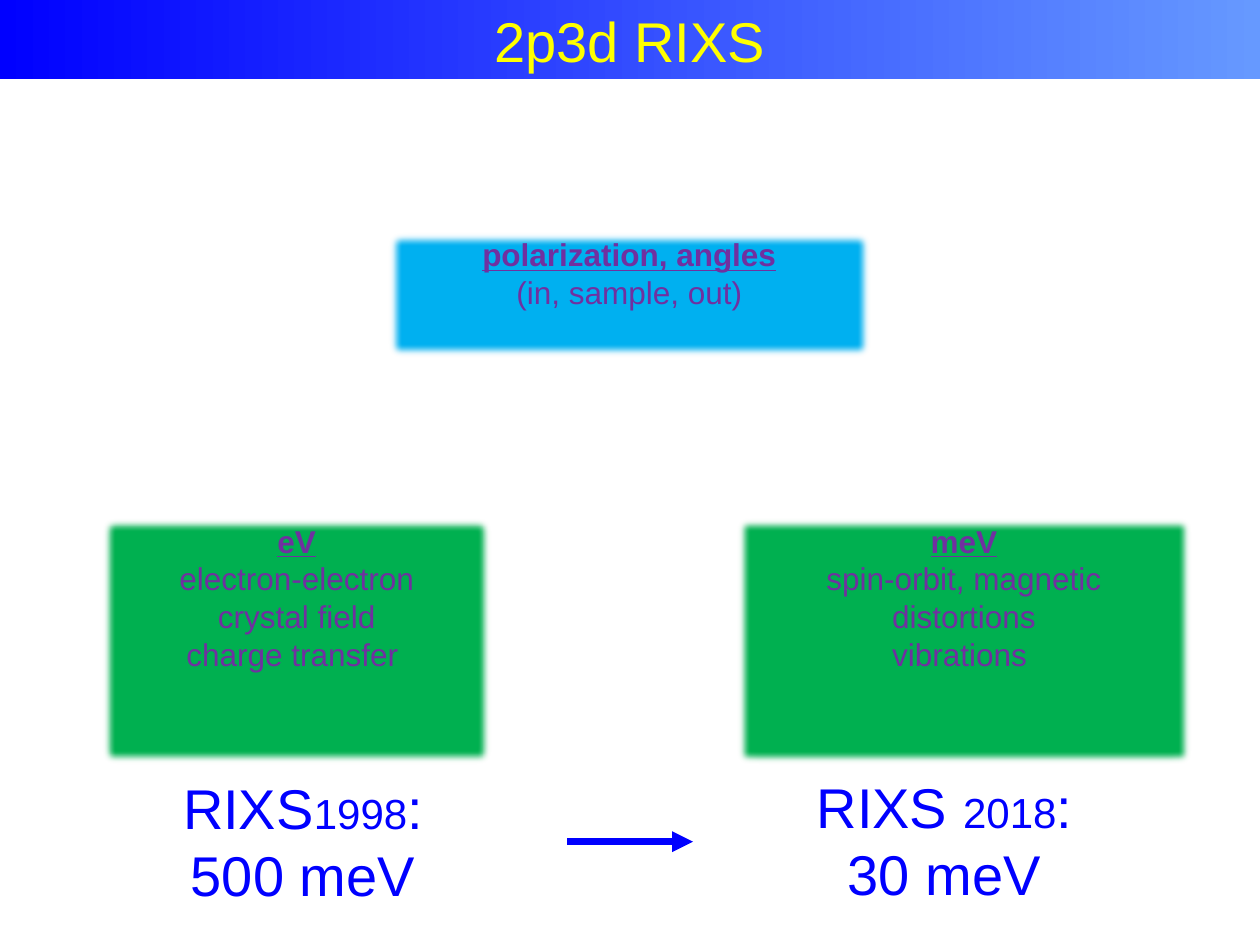
from dataclasses import dataclass

from lxml.etree import SubElement
from pptx import Presentation
from pptx.dml.color import RGBColor
from pptx.enum.shapes import MSO_CONNECTOR, MSO_SHAPE
from pptx.enum.text import MSO_ANCHOR, PP_ALIGN
from pptx.oxml.ns import qn
from pptx.util import Inches, Pt


@dataclass(frozen=True)
class Theme:
    font: str = "Arial"
    blue: RGBColor = RGBColor(0x00, 0x00, 0xFF)
    light_blue: RGBColor = RGBColor(0x66, 0x99, 0xFF)
    yellow: RGBColor = RGBColor(0xFF, 0xFF, 0x00)
    purple: RGBColor = RGBColor(0x70, 0x30, 0xA0)
    green: RGBColor = RGBColor(0x00, 0xB0, 0x50)
    cyan: RGBColor = RGBColor(0x00, 0xB0, 0xF0)
    title_size: Pt = Pt(32)
    year_size: Pt = Pt(24)
    body_size: Pt = Pt(18)
    arrow_width: Pt = Pt(4)
    soft_edge: Pt = Pt(5)


THEME = Theme()


def style_paragraph(para, size, color):
    para.alignment = PP_ALIGN.CENTER
    para.font.name = THEME.font
    para.font.size = size
    para.font.color.rgb = color


def add_rectangle(page, bounds):
    box = page.shapes.add_shape(MSO_SHAPE.RECTANGLE, *map(Inches, bounds))
    box.shadow.inherit = False
    box.line.fill.background()
    return box


def add_title_band(page, bounds, title):
    band = add_rectangle(page, bounds)
    band.fill.gradient()
    band.fill.gradient_angle = 0
    for stop, color in zip(band.fill.gradient_stops, (THEME.blue, THEME.light_blue)):
        stop.color.rgb = color
    band.text_frame.vertical_anchor = MSO_ANCHOR.MIDDLE
    para = band.text_frame.paragraphs[0]
    para.text = title
    style_paragraph(para, THEME.title_size, THEME.yellow)


def add_topic_box(page, bounds, color, heading, lines):
    box = add_rectangle(page, bounds)
    box.fill.solid()
    box.fill.fore_color.rgb = color
    effects = box._element.spPr.find(qn("a:effectLst"))
    SubElement(effects, qn("a:softEdge"), rad=str(int(THEME.soft_edge)))

    frame = box.text_frame
    frame.word_wrap = False
    frame.vertical_anchor = MSO_ANCHOR.TOP
    frame.text = "\n".join([heading, *lines])
    for para in frame.paragraphs:
        style_paragraph(para, THEME.body_size, THEME.purple)
    heading_font = frame.paragraphs[0].font
    heading_font.bold = True
    heading_font.underline = True


def add_resolution(page, bounds, label, year, value):
    box = page.shapes.add_textbox(*map(Inches, bounds))
    box.text_frame.word_wrap = False
    para = box.text_frame.paragraphs[0]
    style_paragraph(para, THEME.title_size, THEME.blue)
    for text in (label, year, ":"):
        span = para.add_run()
        span.text = text
        if text == year:
            span.font.size = THEME.year_size
    para.add_line_break()
    para.add_run().text = value


def add_arrow(page, left, right, height):
    arrow = page.shapes.add_connector(
        MSO_CONNECTOR.STRAIGHT, *map(Inches, (left, height, right, height))
    )
    arrow.line.color.rgb = THEME.blue
    arrow.line.width = THEME.arrow_width
    SubElement(arrow.line._get_or_add_ln(), qn("a:tailEnd"), type="triangle")
    SubElement(arrow._element.spPr, qn("a:effectLst"))


def main():
    deck = Presentation()
    deck.slide_width, deck.slide_height = Inches(10), Inches(7.5)
    page = deck.slides.add_slide(deck.slide_layouts[6])

    add_title_band(page, (0, 0, 10, 0.63), "2p3d RIXS")

    # Energy scales and geometry
    add_topic_box(page, (0.79, 4.09, 3.13, 1.99), THEME.green, "eV",
                  ["electron-electron", "crystal field", "charge transfer "])
    add_topic_box(page, (3.06, 1.82, 3.87, 1.04), THEME.cyan,
                  "polarization, angles", ["(in, sample, out)"])
    add_topic_box(page, (5.83, 4.09, 3.64, 1.99), THEME.green, "meV",
                  ["spin-orbit, magnetic", "distortions", "vibrations "])

    # Progress in resolution
    add_resolution(page, (6.37, 6.08, 2.25, 1.18), "RIXS ", "2018", "30 meV")
    add_resolution(page, (1.34, 6.09, 2.13, 1.18), "RIXS", "1998", "500 meV")
    add_arrow(page, 4.5, 5.5, 6.68)

    deck.save("out.pptx")


if __name__ == "__main__":
    main()
